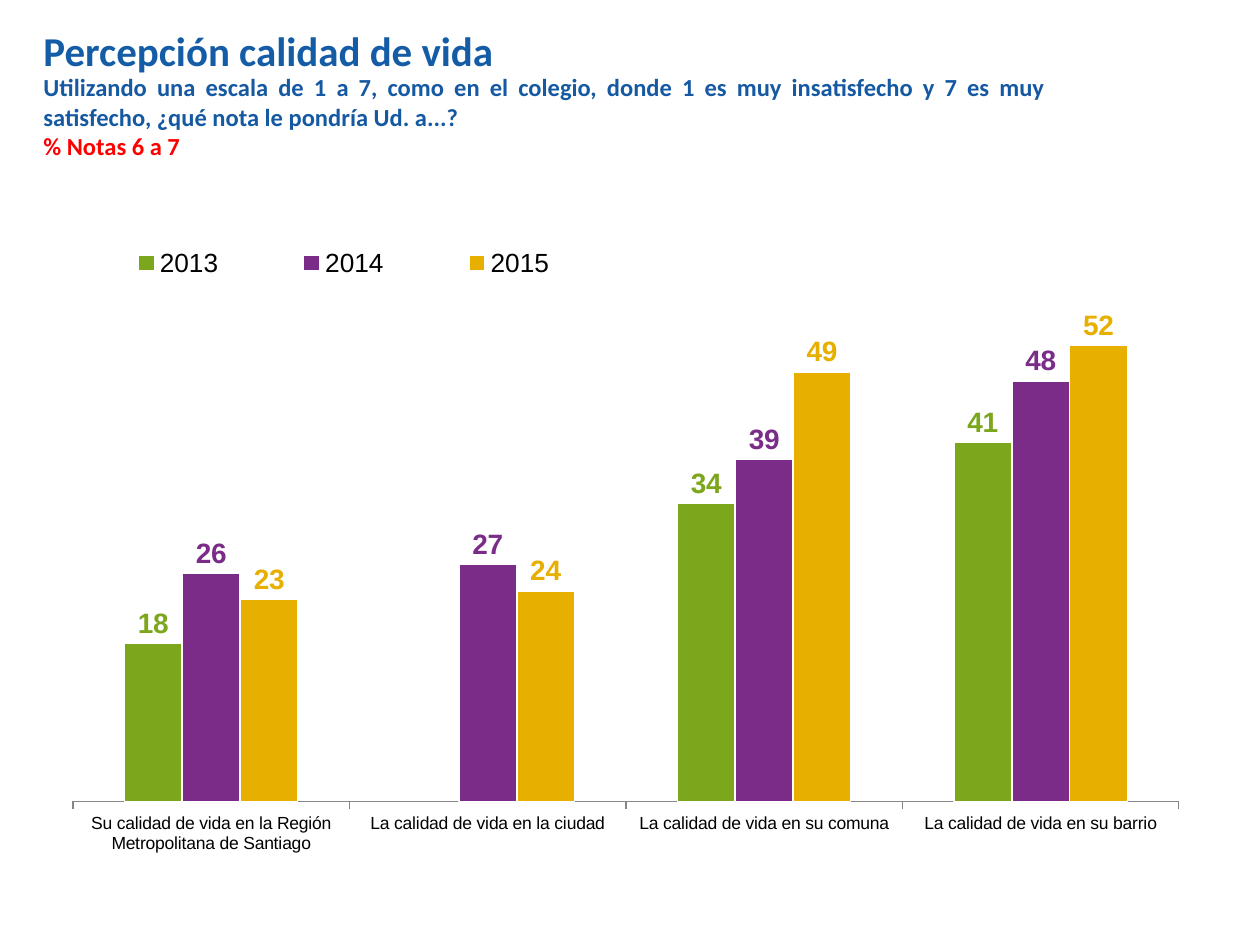
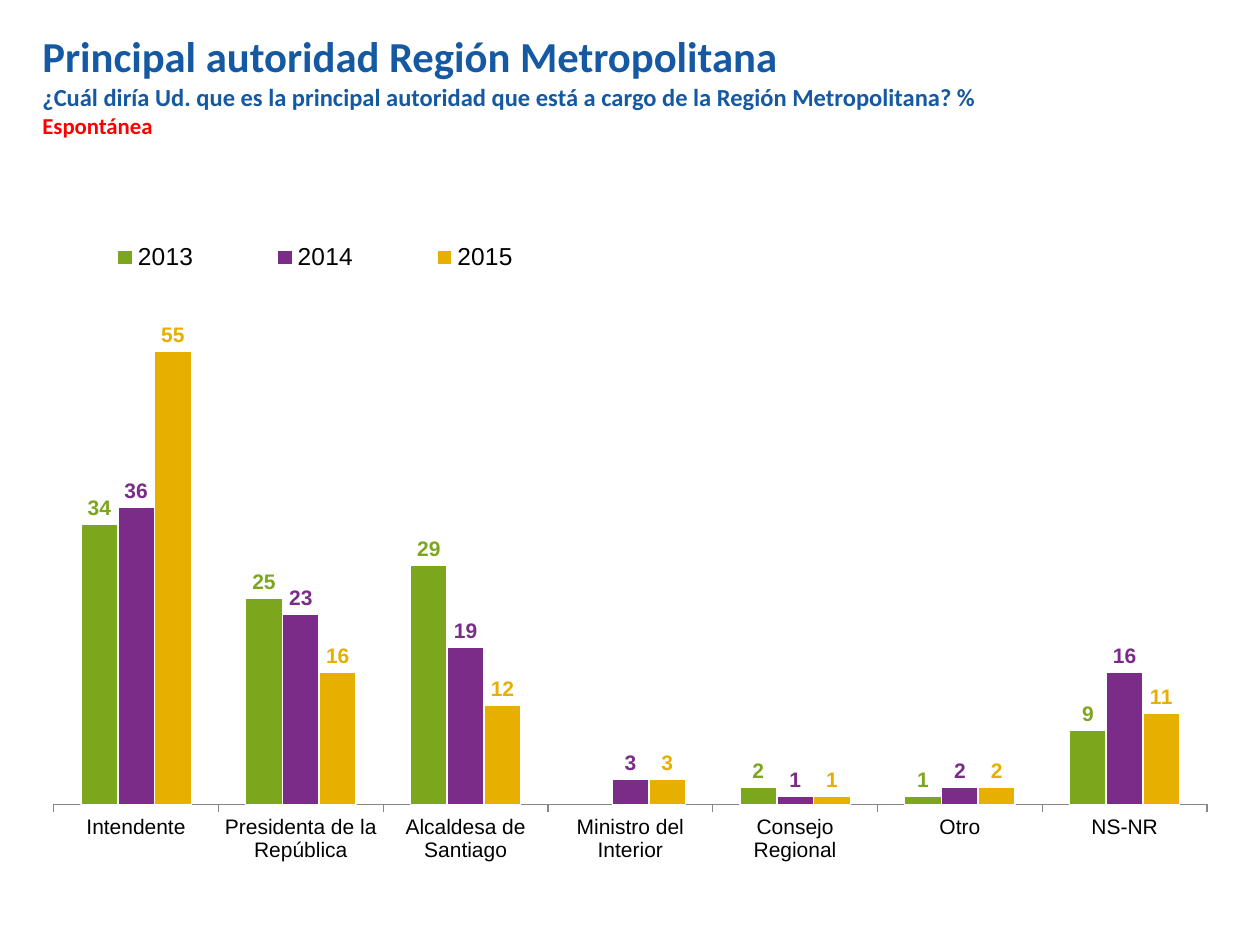
"""Builds two survey slides, each with a heading and a clustered column chart by year."""
from pptx import Presentation
from pptx.chart.data import CategoryChartData
from pptx.dml.color import RGBColor
from pptx.enum.chart import XL_CHART_TYPE, XL_LABEL_POSITION, XL_LEGEND_POSITION, XL_TICK_LABEL_POSITION, XL_TICK_MARK
from pptx.enum.text import MSO_ANCHOR, MSO_AUTO_SIZE, PP_ALIGN
from pptx.oxml import parse_xml
from pptx.oxml.ns import nsdecls, qn
from pptx.util import Pt

PX = 914400 / 126
BLUE, RED, WHITE, BLACK, GRAY = "1559A2", "FF0000", "FFFFFF", "000000", "868686"
YEAR_COLORS = {"2013": "7CA71D", "2014": "7B2C88", "2015": "E7AF00"}

SLIDES = [
    {
        "title": ("Percepción calidad de vida", 23.4, "155CA7", (31, 10, 1076, 81)),
        "question_box": (31, 66, 1027, 102),
        "question": [
            ("Utilizando una escala de 1 a 7, como en el colegio, donde 1 es muy insatisfecho "
             "y 7 es muy satisfecho, ¿qué nota le pondría Ud. a...?", 14, BLUE),
            ("% Notas 6 a 7", 14, RED),
        ],
        "chart_box": (50, 231, 1152, 641),
        "plot": (0.02, 0.07, 0.96, 0.82),
        "legend": (0.01, 0.01, 0.49, 0.08),
        "gap": 180,
        "sizes": {"axis": 10, "legend": 15, "labels": 16},
        "categories": ["Su calidad de vida en la Región Metropolitana de Santiago",
                       "La calidad de vida en la ciudad", "La calidad de vida en su comuna",
                       "La calidad de vida en su barrio"],
        "values": [(18, None, 34, 41), (26, 27, 39, 48), (23, 24, 49, 52)],
    },
    {
        "title": ("Principal autoridad Región Metropolitana", 24.4, BLUE, (30, 15, 1160, 81)),
        "question_box": (30, 76, 1066, 102),
        "question": [
            ("¿Cuál diría Ud. que es la principal autoridad que está a cargo "
             "de la Región Metropolitana? %", 14, BLUE),
            ("Espontánea", 13, RED),
        ],
        "chart_box": (30, 231, 1189, 659),
        "plot": (0.02, 0.12, 0.97, 0.75),
        "legend": (0.01, 0, 0.46, 0.08),
        "gap": 150,
        "sizes": {"axis": 12, "legend": 14, "labels": 12},
        "categories": ["Intendente", "Presidenta de la República", "Alcaldesa de Santiago",
                       "Ministro del Interior", "Consejo Regional", "Otro", "NS-NR"],
        "values": [(34, 25, 29, None, 2, 1, 9), (36, 23, 19, 3, 1, 2, 16), (55, 16, 12, 3, 1, 2, 11)],
    },
]


def style_font(font, name, size, color, bold=False):
    font.name = name
    font.size = Pt(size)
    font.bold = bold
    font.color.rgb = RGBColor.from_string(color)


def place(element, index, box, target=""):
    for layout in element.findall(qn("c:layout")):
        element.remove(layout)
    modes = '<c:xMode val="edge"/><c:yMode val="edge"/>'
    sides = "".join(f'<c:{side} val="{value}"/>' for side, value in zip("xywh", box))
    element.insert(index, parse_xml(
        f'<c:layout {nsdecls("c")}><c:manualLayout>{target}{modes}{sides}</c:manualLayout></c:layout>'))


presentation = Presentation()
presentation.slide_width = round(1260 * PX)
presentation.slide_height = round(945 * PX)

for content in SLIDES:
    slide = presentation.slides.add_slide(presentation.slide_layouts[6])
    sizes = content["sizes"]

    chart_data = CategoryChartData()
    chart_data.categories = content["categories"]
    for year, values in zip(YEAR_COLORS, content["values"]):
        chart_data.add_series(year, values)
    chart_box = [round(length * PX) for length in content["chart_box"]]
    chart = slide.shapes.add_chart(XL_CHART_TYPE.COLUMN_CLUSTERED, *chart_box, chart_data).chart
    chart.has_title = False
    style_font(chart.font, "Arial", 10, BLACK)

    chart.has_legend = True
    chart.legend.position = XL_LEGEND_POSITION.TOP
    chart.legend.include_in_layout = False
    style_font(chart.legend.font, "Arial", sizes["legend"], BLACK)
    place(chart.legend._element, 1, content["legend"])
    plot_area = chart._chartSpace.chart.plotArea
    place(plot_area, 0, content["plot"], '<c:layoutTarget val="inner"/>')

    category_axis = chart.category_axis
    category_axis.tick_label_position = XL_TICK_LABEL_POSITION.LOW
    category_axis.major_tick_mark = XL_TICK_MARK.OUTSIDE
    category_axis.format.line.color.rgb = RGBColor.from_string(GRAY)
    category_axis.format.line.width = Pt(0.75)
    style_font(category_axis.tick_labels.font, "Arial", sizes["axis"], BLACK)
    value_axis = chart.value_axis
    value_axis.minimum_scale = 0
    value_axis.maximum_scale = 60
    value_axis.has_major_gridlines = False
    value_axis.visible = False

    plot = chart.plots[0]
    plot.vary_by_categories = False
    plot.gap_width = content["gap"]
    plot.overlap = -1
    for series, color in zip(plot.series, YEAR_COLORS.values()):
        series.invert_if_negative = False
        series.format.fill.solid()
        series.format.fill.fore_color.rgb = RGBColor.from_string(color)
        series.format.line.color.rgb = RGBColor.from_string(WHITE)
        series.format.line.width = Pt(0.75)
        labels = series.data_labels
        labels.show_value = True
        labels.position = XL_LABEL_POSITION.OUTSIDE_END
        labels.number_format = "#,##0"
        labels.number_format_is_linked = False
        style_font(labels.font, "Arial", sizes["labels"], color, bold=True)

    title, title_size, title_color, title_box = content["title"]
    text_boxes = [
        (content["question_box"], content["question"], MSO_ANCHOR.TOP, PP_ALIGN.JUSTIFY,
         MSO_AUTO_SIZE.SHAPE_TO_FIT_TEXT),
        (title_box, [(title, title_size, title_color)], MSO_ANCHOR.MIDDLE, PP_ALIGN.LEFT,
         MSO_AUTO_SIZE.NONE),
    ]
    for box, lines, anchor, alignment, auto_size in text_boxes:
        text_frame = slide.shapes.add_textbox(*[round(length * PX) for length in box]).text_frame
        text_frame.word_wrap = True
        text_frame.auto_size = auto_size
        text_frame.vertical_anchor = anchor
        text_frame.text = "\n".join(text for text, size, color in lines)
        for paragraph, (text, size, color) in zip(text_frame.paragraphs, lines):
            paragraph.alignment = alignment
            style_font(paragraph.font, "Calibri", size, color, bold=True)

presentation.save("out.pptx")
